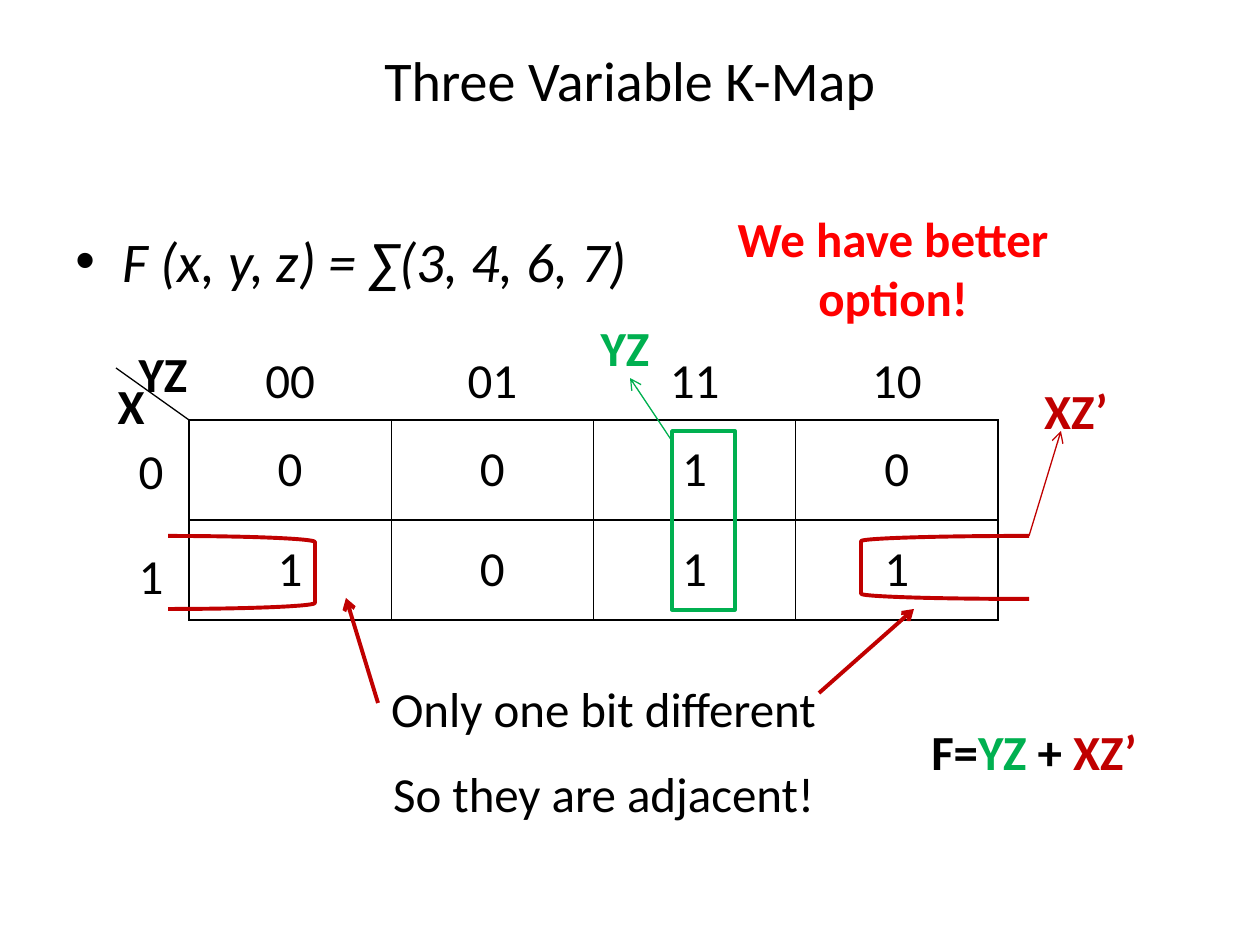
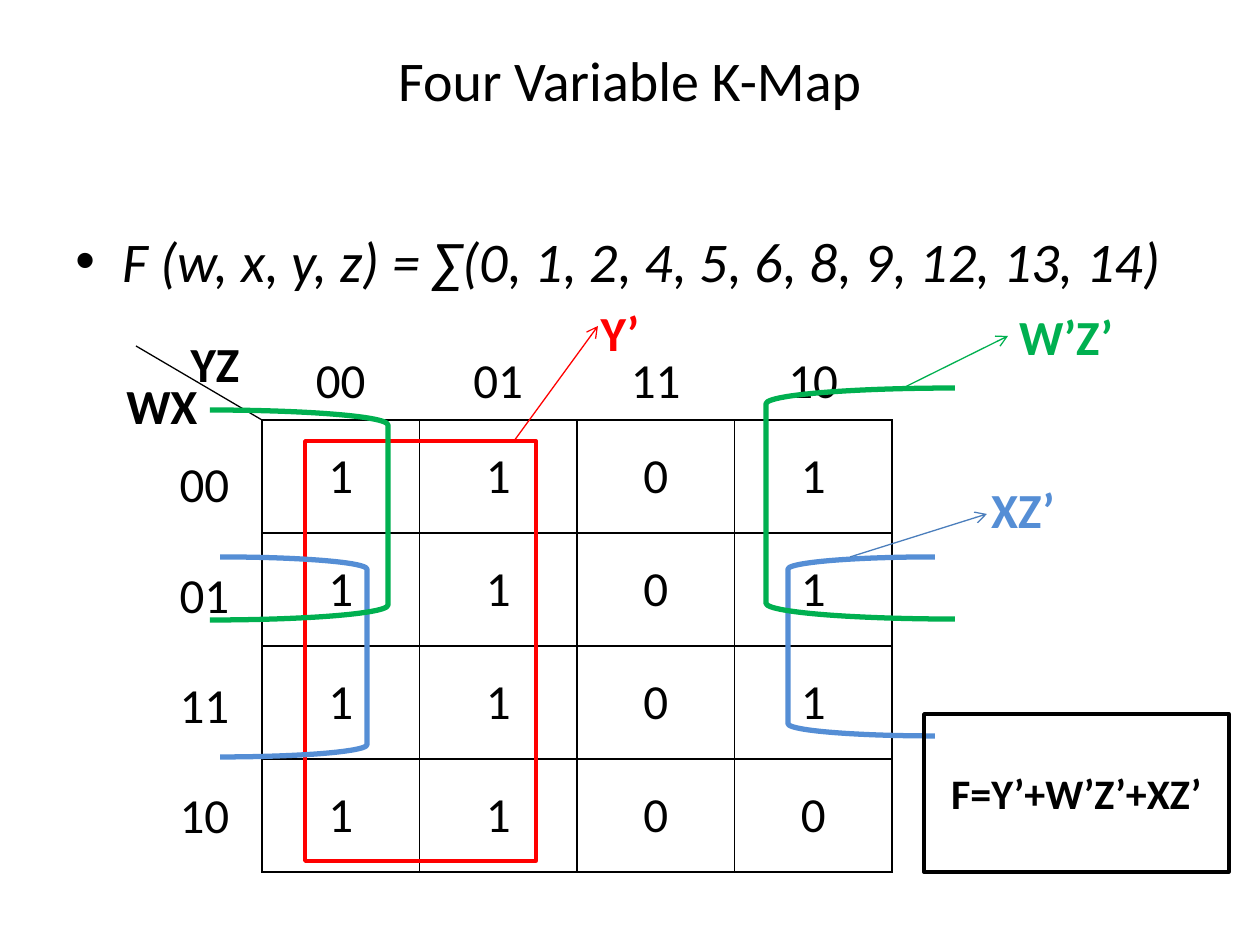
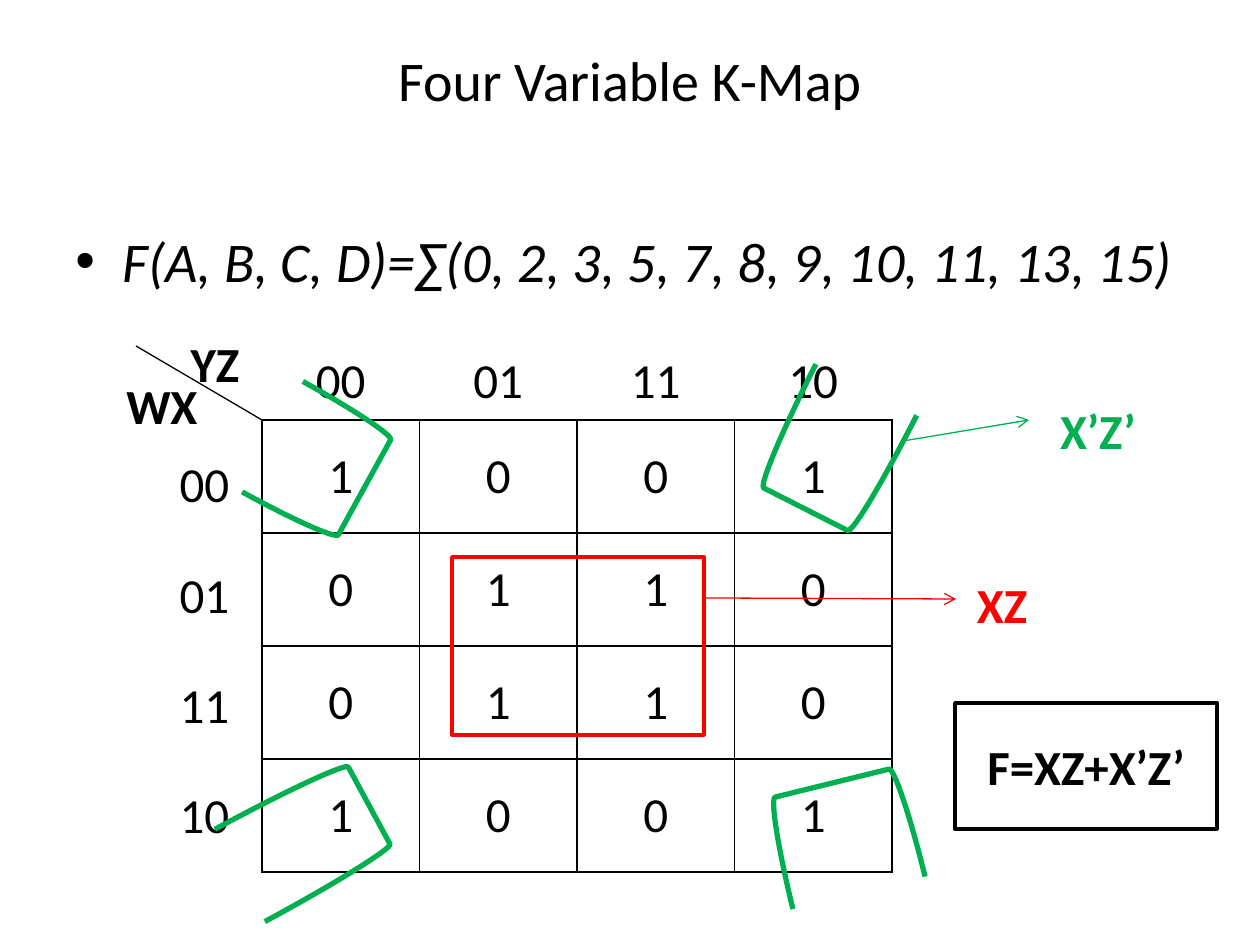
from lxml import etree
from pptx import Presentation
from pptx.dml.color import RGBColor
from pptx.enum.shapes import MSO_CONNECTOR, MSO_SHAPE
from pptx.enum.text import MSO_ANCHOR, PP_ALIGN
from pptx.oxml.ns import qn
from pptx.util import Pt

STRAIGHT = MSO_CONNECTOR.STRAIGHT
RECTANGLE = MSO_SHAPE.RECTANGLE
LEFT_BRACKET = MSO_SHAPE.LEFT_BRACKET
RIGHT_BRACKET = MSO_SHAPE.RIGHT_BRACKET
TOP, MIDDLE = MSO_ANCHOR.TOP, MSO_ANCHOR.MIDDLE
LEFT, CENTER = PP_ALIGN.LEFT, PP_ALIGN.CENTER

BLACK, RED, GREEN = "000000", "FF0000", "00B050"
DARK_RED, BLUE, ARROW_BLUE = "C00000", "558ED5", "4B7EBC"
FONT = "Calibri"
PLAIN_TABLE = "{2D5ABB26-0587-4C30-8999-92F81FD0307C}"
GRAY_CODE = ["00", "01", "11", "10"]
TITLE_BOX = (63, 0, 1134, 158)
BODY_BOX = (63, 220, 1134, 624)
THREE_VARIABLE_BOX = (189, 420, 809, 200)
FOUR_VARIABLE_BOX = (262, 420, 630, 452)


def px(length):
    return round(length * 914400 / 126)


def scaled(box):
    return [px(length) for length in box]


def shift(box, x, y, *size):
    return (box[0] + x, box[1] + y, *size)


def rgb(colour):
    return RGBColor.from_string(colour)


def add_xml(parent, tag, **attributes):
    return etree.SubElement(parent, qn(tag), attributes)


def style(paragraph, size, colour=BLACK, bold=False, italic=False, align=CENTER):
    paragraph.alignment = align
    font = paragraph.font
    font.name, font.size, font.bold, font.italic = FONT, Pt(size), bold, italic
    font.color.rgb = rgb(colour)


def add_text(slide, box, wording, size=28, colour=BLACK, bold=False,
             italic=False, align=CENTER, anchor=MIDDLE):
    frame = slide.shapes.add_textbox(*scaled(box)).text_frame
    frame.word_wrap = True
    frame.vertical_anchor = anchor
    paragraph = frame.paragraphs[0]
    paragraph.text = wording
    style(paragraph, size, colour, bold, italic, align)
    return paragraph


def add_label(slide, box, wording, colour=BLACK):
    return add_text(slide, box, wording, colour=colour, bold=True)


def add_outline(slide, preset, box, colour, weight, rotation=0):
    outline = slide.shapes.add_shape(preset, *scaled(box))
    outline.shadow.inherit = False
    outline.fill.background()
    outline.line.color.rgb = rgb(colour)
    outline.line.width = Pt(weight)
    outline.rotation = rotation
    return outline


def add_line(slide, box, start, end, colour, weight=0.75, arrow=True):
    ends = shift(box, *start) + shift(box, *end)
    line = slide.shapes.add_connector(STRAIGHT, *scaled(ends))
    line.line.color.rgb = rgb(colour)
    line.line.width = Pt(weight)
    properties = line.element.spPr
    if arrow:
        add_xml(properties.find(qn("a:ln")), "a:tailEnd", type="arrow")
    add_xml(properties, "a:effectLst")


def add_border(cell):
    properties = cell._tc.get_or_add_tcPr()
    for position, side in enumerate(("a:lnL", "a:lnR", "a:lnT", "a:lnB")):
        edge = etree.Element(qn(side), w=str(Pt(1)))
        add_xml(add_xml(edge, "a:solidFill"), "a:srgbClr", val=BLACK)
        properties.insert(position, edge)


def add_grid(slide, box, rows, align=CENTER, anchor=MIDDLE, bordered=False):
    left, top, width, height = scaled(box)
    table = slide.shapes.add_table(
        len(rows), len(rows[0]), left, top, width, height).table
    table.first_row = table.horz_banding = False
    table._tbl.tblPr.find(qn("a:tableStyleId")).text = PLAIN_TABLE
    for column in table.columns:
        column.width = width // len(rows[0])
    for row, values in zip(table.rows, rows):
        row.height = height // len(rows)
        for cell, value in zip(row.cells, values):
            cell.fill.background()
            cell.vertical_anchor = anchor
            cell.text = value
            style(cell.text_frame.paragraphs[0], 28, align=align)
            if bordered:
                add_border(cell)


def add_heading(slide, title, function):
    add_text(slide, TITLE_BOX, title, 32)
    bullet = add_text(slide, BODY_BOX, function, 32, italic=True,
                      align=LEFT, anchor=TOP)
    properties = bullet._p.get_or_add_pPr()
    properties.set("marL", str(px(47)))
    properties.set("indent", str(px(-47)))
    spacing = etree.Element(qn("a:spcBef"))
    add_xml(spacing, "a:spcPct", val="20000")
    marks = etree.Element(qn("a:buFont"), typeface="Arial")
    character = etree.Element(qn("a:buChar"), char="•")
    for position, part in enumerate((spacing, marks, character)):
        properties.insert(position, part)


def add_map(slide, box, values):
    add_grid(slide, box, values, bordered=True)
    add_grid(slide, shift(box, 0, -74, box[2], 72), [GRAY_CODE], anchor=TOP)


def add_three_variable_map(slide, box, values):
    add_map(slide, box, values)
    add_grid(slide, shift(box, -63, 0, 63, 210), ["0", "1"], align=LEFT)
    add_line(slide, box, (-73, -52), (0, 0), BLACK, arrow=False)
    add_label(slide, shift(box, -73, -84, 94, 74), "YZ")
    add_label(slide, shift(box, -105, -52, 94, 74), "X")


def add_four_variable_map(slide, box, values):
    add_map(slide, box, values)
    add_grid(slide, shift(box, -115, 11, 115, 441),
             [[code] for code in GRAY_CODE])
    add_line(slide, box, (0, 0), (-126, -74), BLACK, arrow=False)
    add_label(slide, shift(box, -94, -94, 94, 74), "YZ")
    add_label(slide, shift(box, -168, -52, 136, 74), "WX")


def add_loops(slide, box, loops):
    for preset, place, colour, weight, *rotation in loops:
        add_outline(slide, preset, shift(box, *place), colour, weight, *rotation)


def add_terms(slide, box, terms):
    for wording, place, colour, start, end, arrow_colour in terms:
        add_line(slide, box, start, end, arrow_colour)
        add_label(slide, shift(box, *place), wording, colour)


def add_result(slide, box, wording, size):
    result = add_outline(slide, RECTANGLE, box, BLACK, 2)
    paragraph = result.text_frame.paragraphs[0]
    paragraph.text = wording
    style(paragraph, size, bold=True)


def build_adjacent_columns(slide, box):
    add_heading(slide, "Three Variable K-Map", "F (x, y, z) = ∑(3, 4, 6, 7)")
    add_three_variable_map(slide, box, ["0010", "1011"])
    add_label(slide, shift(box, 494, -200, 420, 94),
              "We have better option!", RED)
    add_loops(slide, box, [
        (RECTANGLE, (483, 11, 63, 179), GREEN, 2),
        (LEFT_BRACKET, (672, 116, 168, 63), DARK_RED, 2.25),
        (RIGHT_BRACKET, (-21, 116, 147, 73), DARK_RED, 2.25),
    ])
    remarks = ["Only one bit different", "So they are adjacent!"]
    for index, remark in enumerate(remarks):
        add_text(slide, shift(box, 73, 252 + 85 * index, 683, 72), remark,
                 anchor=TOP)
    add_line(slide, box, (630, 273), (725, 189), DARK_RED, 2.25)
    add_line(slide, box, (189, 283), (157, 178), DARK_RED, 2.25)
    result = add_label(slide, shift(box, 703, 242, 284, 178), "")
    for wording, colour in (("F=", BLACK), ("YZ ", GREEN),
                            ("+ ", BLACK), ("XZ’", DARK_RED)):
        term = result.add_run()
        term.text = wording
        term.font.color.rgb = rgb(colour)
        term.font.name, term.font.size, term.font.bold = FONT, Pt(28), True
    add_terms(slide, box, [
        ("XZ’", (829, -52, 116, 84), DARK_RED, (840, 116), (872, 11), DARK_RED),
        ("YZ", (378, -115, 116, 84), GREEN, (483, 21), (441, -42), GREEN),
    ])


def build_wrapped_columns(slide, box):
    add_heading(slide, "Four Variable K-Map",
                "F (w, x, y, z) = ∑(0, 1, 2, 4, 5, 6, 8, 9, 12, 13, 14)")
    add_four_variable_map(slide, box, ["1101", "1101", "1101", "1100"])
    add_loops(slide, box, [
        (RECTANGLE, (43, 21, 231, 420), RED, 2),
        (LEFT_BRACKET, (526, 137, 147, 179), BLUE, 3),
        (RIGHT_BRACKET, (-42, 137, 147, 200), BLUE, 3),
        (LEFT_BRACKET, (504, -32, 189, 231), GREEN, 3),
        (RIGHT_BRACKET, (-52, -10, 178, 210), GREEN, 3),
    ])
    add_terms(slide, box, [
        ("W’Z’", (725, -126, 158, 84), GREEN, (641, -32), (746, -84), GREEN),
        ("XZ’", (693, 42, 136, 94), BLUE, (588, 137), (725, 94), ARROW_BLUE),
        ("Y’", (295, -115, 126, 53), RED, (252, 21), (336, -94), RED),
    ])
    add_result(slide, shift(box, 662, 294, 305, 158), "F=Y’+W’Z’+XZ’", 24)


def build_four_corners(slide, box):
    add_heading(slide, "Four Variable K-Map",
                "F(A, B, C, D)=∑(0, 2, 3, 5, 7, 8, 9, 10, 11, 13, 15)")
    add_four_variable_map(slide, box, ["1001", "0110", "0110", "1001"])
    add_loops(slide, box, [
        (RECTANGLE, (190, 137, 252, 178), RED, 2),
        (LEFT_BRACKET, (507, -27, 134, 113), GREEN, 3, 296.9),
        (LEFT_BRACKET, (527, 350, 113, 136), GREEN, 3, 76.2),
        (RIGHT_BRACKET, (4, -21, 105, 126), GREEN, 3, 28.8),
        (RIGHT_BRACKET, (-31, 368, 147, 105), GREEN, 3, 331.6),
    ])
    add_terms(slide, box, [
        ("X’Z’", (778, -32, 116, 84), GREEN, (641, 21), (767, 0), GREEN),
        ("XZ", (693, 147, 94, 73), RED, (442, 178), (694, 179), RED),
    ])
    add_result(slide, shift(box, 693, 283, 262, 126), "F=XZ+X’Z’", 28)


def main():
    deck = Presentation()
    deck.slide_width, deck.slide_height = px(1260), px(945)
    for build, box in (
        (build_adjacent_columns, THREE_VARIABLE_BOX),
        (build_wrapped_columns, FOUR_VARIABLE_BOX),
        (build_four_corners, FOUR_VARIABLE_BOX),
    ):
        build(deck.slides.add_slide(deck.slide_layouts[6]), box)
    deck.save("out.pptx")


if __name__ == "__main__":
    main()
